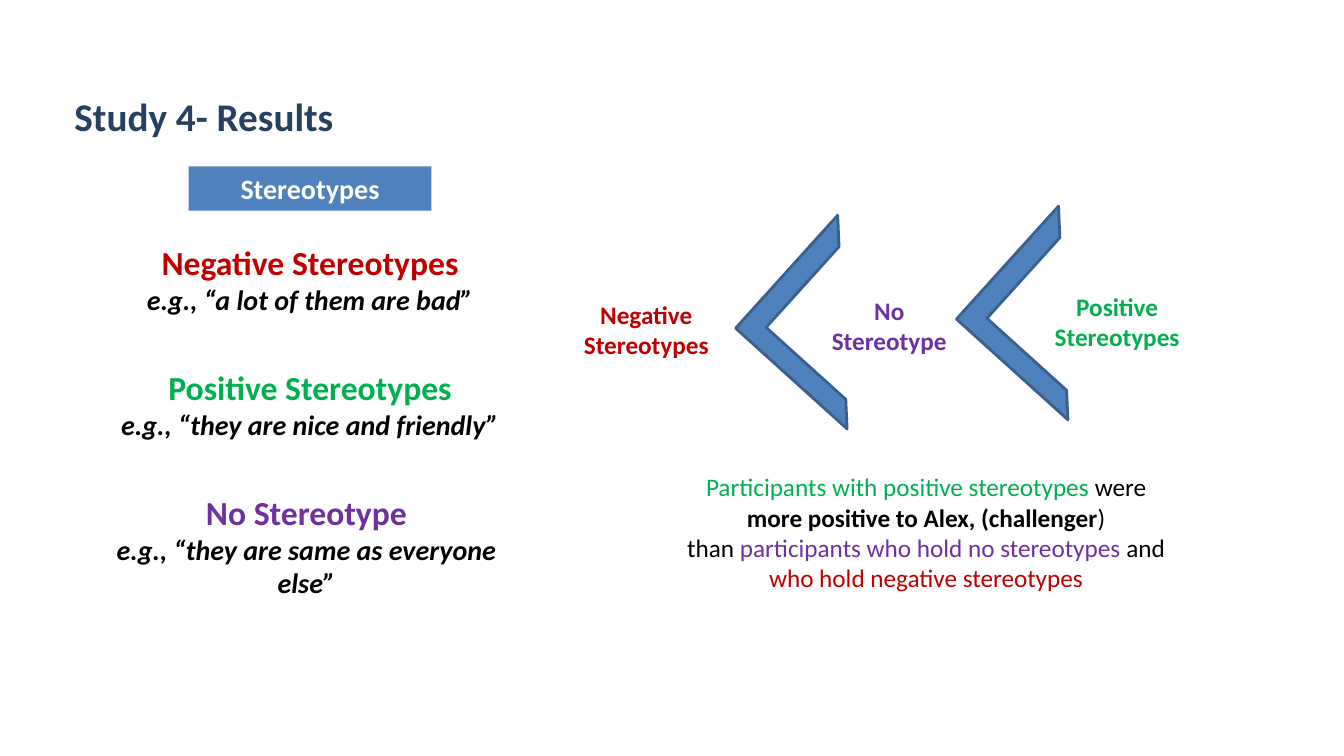
from dataclasses import dataclass

from pptx import Presentation
from pptx import util as u
from pptx.dml.color import RGBColor
from pptx.enum import shapes, text

NAVY, BLUE, EDGE = "254061", "4F81BD", "3A5F8C"
RED, GREEN, PURPLE = "C00000", "00B050", "7030A0"
BLACK, WHITE = "000000", "FFFFFF"


@dataclass
class Run:
    text: str
    size: int
    color: str
    bold: bool = False
    italic: bool = False


@dataclass
class Box:
    left: float
    top: float
    width: float
    height: float


@dataclass
class Example:
    box: Box
    heading: str
    quote: str
    color: str


@dataclass
class Label:
    left: float
    top: float
    text: str
    color: str


def rgb(color: str) -> RGBColor:
    return RGBColor.from_string(color)


def inches(box: Box) -> list[u.Length]:
    return [u.Inches(v) for v in (box.left, box.top, box.width, box.height)]


def write(tf, paragraphs: list[list[Run]], align=text.PP_ALIGN.CENTER) -> None:
    tf.word_wrap = True
    for i, runs in enumerate(paragraphs):
        p = tf.paragraphs[0] if i == 0 else tf.add_paragraph()
        p.alignment = align
        for run in runs:
            r = p.add_run()
            r.text = run.text
            r.font.name = "Calibri"
            r.font.size = u.Pt(run.size)
            r.font.bold = run.bold
            r.font.italic = run.italic
            r.font.color.rgb = rgb(run.color)


def add_text(s, box: Box, paragraphs: list[list[Run]], align=text.PP_ALIGN.CENTER):
    tf = s.shapes.add_textbox(*inches(box)).text_frame
    write(tf, paragraphs, align)
    return tf


def add_filled(s, kind, box: Box):
    sp = s.shapes.add_shape(kind, *inches(box))
    sp.shadow.inherit = False
    sp.fill.solid()
    sp.fill.fore_color.rgb = rgb(BLUE)
    return sp


def add_less_than(s, left: float, top: float) -> None:
    sp = add_filled(s, shapes.MSO_SHAPE.HALF_FRAME, Box(left, top, 1.51, 1.49))
    sp.adjustments[0] = 0.147
    sp.adjustments[1] = 0.14
    sp.rotation = 312.1
    sp.line.color.rgb = rgb(EDGE)
    sp.line.width = u.Pt(2)


EXAMPLES = [
    Example(Box(1.1, 2.35, 3.95, 0.84), "Negative Stereotypes",
            "e.g., “a lot of them are bad”", RED),
    Example(Box(0.88, 3.59, 4.39, 0.84), "Positive Stereotypes",
            "e.g., “they are nice and friendly”", GREEN),
    Example(Box(0.81, 4.83, 4.46, 1.18), "No Stereotype",
            "e.g., “they are same as everyone else”", PURPLE),
]

LABELS = [
    Label(5.67, 2.92, "Negative Stereotypes", RED),
    Label(8.08, 2.88, "No Stereotype", PURPLE),
    Label(10.34, 2.84, "Positive Stereotypes", GREEN),
]

FINDING = [
    [Run("Participants with positive stereotypes ", 18, GREEN), Run("were", 18, BLACK)],
    [Run("more positive to Alex, (challenger", 18, BLACK, bold=True), Run(")", 18, BLACK)],
    [Run("than ", 18, BLACK), Run("participants who hold no stereotypes ", 18, PURPLE),
     Run("and", 18, BLACK)],
    [Run("who hold negative stereotypes", 18, RED)],
]


def main() -> None:
    prs = Presentation()
    prs.slide_width, prs.slide_height = u.Inches(13.33), u.Inches(7.5)
    s = prs.slides.add_slide(prs.slide_layouts[6])

    title = add_text(s, Box(0.64, 0.77, 12.06, 0.66),
                     [[Run("Study 4- Results", 28, NAVY, bold=True)]], text.PP_ALIGN.LEFT)
    title.vertical_anchor = text.MSO_ANCHOR.BOTTOM

    banner = add_filled(s, shapes.MSO_SHAPE.RECTANGLE, Box(1.87, 1.65, 2.41, 0.44))
    banner.line.fill.background()
    banner.text_frame.vertical_anchor = text.MSO_ANCHOR.TOP
    write(banner.text_frame, [[Run("Stereotypes", 20, WHITE, bold=True)]])

    for example in EXAMPLES:
        add_text(s, example.box, [
            [Run(example.heading, 24, example.color, bold=True)],
            [Run(example.quote, 20, BLACK, bold=True, italic=True)],
        ])

    for left, top in ((7.6, 2.45), (9.79, 2.36)):
        add_less_than(s, left, top)

    for label in LABELS:
        add_text(s, Box(label.left, label.top, 1.48, 0.71),
                 [[Run(label.text, 18, label.color, bold=True)]])

    add_text(s, Box(5.67, 4.63, 7.03, 1.31), FINDING)
    prs.save("out.pptx")


if __name__ == "__main__":
    main()
